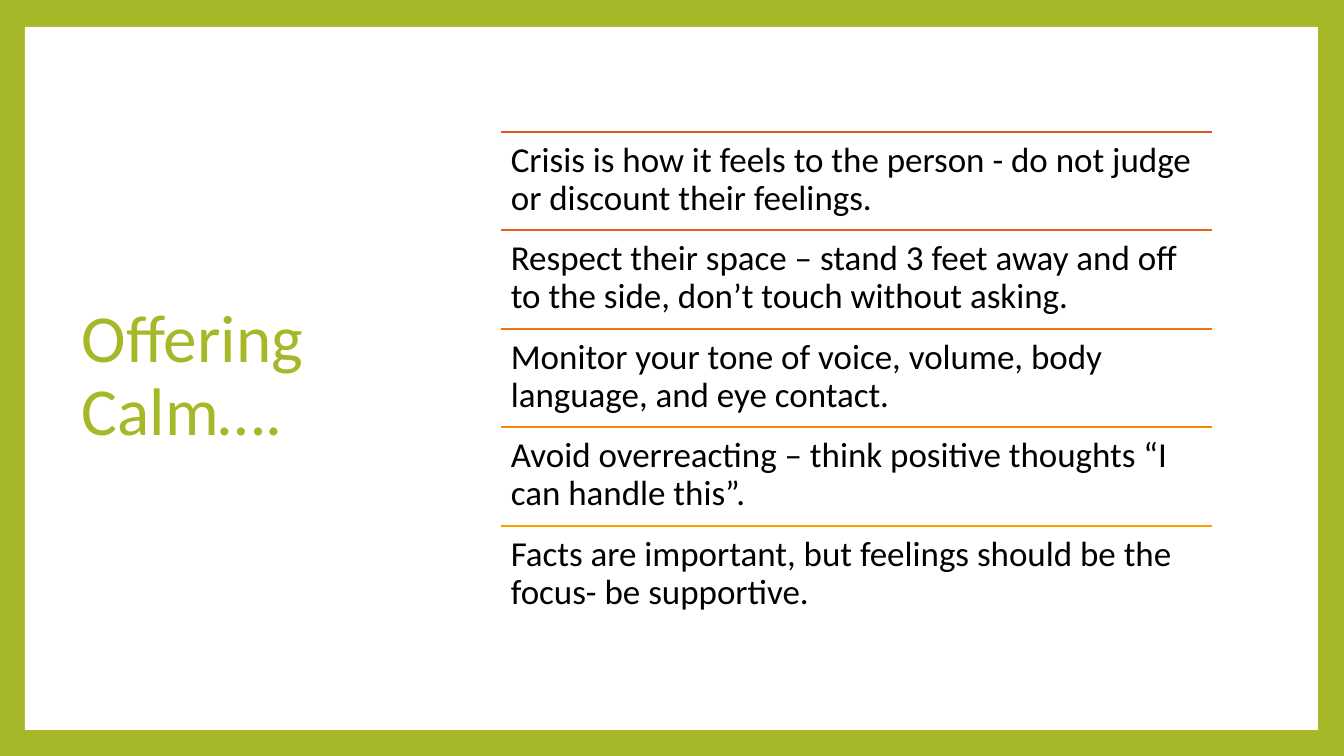
import pptx
import pptx.dml.color
import pptx.enum.shapes
import pptx.enum.text
import pptx.oxml.ns
import pptx.util
from lxml import etree

PX = 914400 / 100.8  # EMU in one px

COLORS = {
    "green": "A6B727",
    "white": "FFFFFF",
    "black": "000000",
    "rule1": "DF5327",
    "rule2": "E7611D",
    "rule3": "EF7213",
    "rule4": "F78609",
    "rule5": "FE9E00",
}


def emu(*lengths):
    return [pptx.util.Emu(round(length * PX)) for length in lengths]


def rgb(name):
    return pptx.dml.color.RGBColor.from_string(COLORS[name])


class SlideBuilder:
    """Holds the slide and its style; one method for each kind of element."""

    font = "Calibri"
    line_spacing = 0.9
    rule_width = 1.5

    def __init__(self, slide):
        self.slide = slide

    def background(self, color):
        fill = self.slide.background.fill
        fill.solid()
        fill.fore_color.rgb = rgb(color)

    def panel(self, left, top, width, height, color):
        panel = self.slide.shapes.add_shape(
            pptx.enum.shapes.MSO_SHAPE.RECTANGLE, *emu(left, top, width, height))
        panel.shadow.inherit = False
        panel.fill.solid()
        panel.fill.fore_color.rgb = rgb(color)
        panel.line.fill.background()

    def rule(self, left, top, width, color):
        rule = self.slide.shapes.add_connector(
            pptx.enum.shapes.MSO_CONNECTOR.STRAIGHT,
            *emu(left, top, left + width, top))
        rule.line.color.rgb = rgb(color)
        rule.line.width = pptx.util.Pt(self.rule_width)
        etree.SubElement(rule._element.spPr, pptx.oxml.ns.qn("a:effectLst"))

    def text(self, left, top, width, height, words, size, color, inset_y, anchor):
        frame = self.slide.shapes.add_textbox(
            *emu(left, top, width, height)).text_frame
        frame.word_wrap = True
        frame.vertical_anchor = anchor
        frame.margin_left = frame.margin_right = pptx.util.Inches(0.1)
        frame.margin_top = frame.margin_bottom = pptx.util.Inches(inset_y)
        paragraph = frame.paragraphs[0]
        paragraph.line_spacing = self.line_spacing
        run = paragraph.add_run()
        run.text = words
        run.font.name = self.font
        run.font.size = pptx.util.Pt(size)
        run.font.color.rgb = rgb(color)


ADVICE = [
    "Crisis is how it feels to the person - do not judge or discount their feelings.",
    "Respect their space – stand 3 feet away and off to the side, don’t touch without asking.",
    "Monitor your tone of voice, volume, body language, and eye contact.",
    "Avoid overreacting – think positive thoughts “I can handle this”.",
    "Facts are important, but feelings should be the focus- be supportive.",
]
ADVICE_LEFT, ADVICE_WIDTH = 501, 711
FIRST_TOP, LAST_TOP, ROW_HEIGHT = 132, 526, 98


def main():
    deck = pptx.Presentation()
    deck.slide_width, deck.slide_height = emu(1344, 756)
    builder = SlideBuilder(deck.slides.add_slide(deck.slide_layouts[6]))
    anchors = pptx.enum.text.MSO_ANCHOR

    # Green frame around a white panel
    builder.background("green")
    builder.panel(25, 27, 1293, 703, "white")

    # Title
    builder.text(72, 68, 371, 618, "Offering Calm….", 48, "green", 0.05, anchors.MIDDLE)

    # Advice rows, each under its own rule
    for row, advice in enumerate(ADVICE):
        top = FIRST_TOP + row * (LAST_TOP - FIRST_TOP) // (len(ADVICE) - 1)
        builder.rule(ADVICE_LEFT, top, ADVICE_WIDTH, f"rule{row + 1}")
        builder.text(ADVICE_LEFT, top, ADVICE_WIDTH, ROW_HEIGHT, advice,
                     25, "black", 0.1, anchors.TOP)

    deck.save("out.pptx")


if __name__ == "__main__":
    main()
